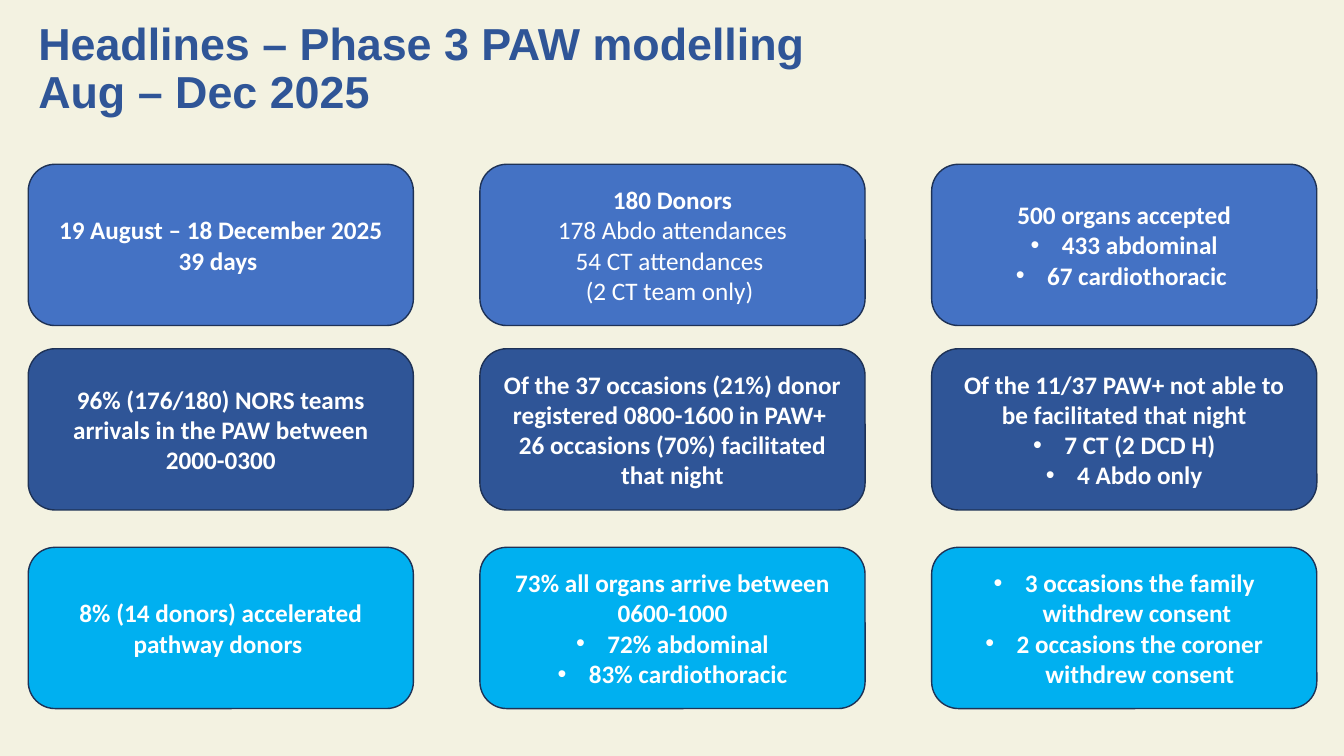
"""Build the Phase 3 PAW modelling headlines slide."""
from dataclasses import dataclass

from lxml.etree import SubElement
from pptx import Presentation
from pptx.dml.color import RGBColor
from pptx.enum.shapes import MSO_SHAPE
from pptx.enum.text import MSO_ANCHOR, MSO_AUTO_SIZE, PP_ALIGN
from pptx.oxml.ns import qn
from pptx.util import Emu, Pt

TITLE = "Headlines – Phase 3 PAW modelling \vAug – Dec 2025"
BOLD, PLAIN, BULLET = "bold", "plain", "bullet"
ROWS = [
    ("4472C4", 163, [
        [(BOLD, "19 August – 18 December 2025"), (BOLD, "39 days ")],
        [(BOLD, "180 Donors"), (PLAIN, "178 Abdo attendances"),
         (PLAIN, "54 CT attendances "), (PLAIN, "(2 CT team only) ")],
        [(BOLD, "500 organs accepted"), (BULLET, "433 abdominal"),
         (BULLET, "67 cardiothoracic ")],
    ]),
    ("2F5597", 346, [
        [(BOLD, "96% (176/180) NORS teams arrivals in the PAW between 2000-0300")],
        [(BOLD, "Of the 37 occasions (21%) donor registered 0800-1600 in PAW+ "),
         (BOLD, "26 occasions (70%) facilitated that night")],
        [(BOLD, "Of the 11/37 PAW+ not able to be facilitated that night"),
         (BULLET, "7 CT (2 DCD H)"), (BULLET, "4 Abdo only")],
    ]),
    ("00B0F0", 543, [
        [(BOLD, "8% (14 donors) accelerated pathway donors ")],
        [(BOLD, "73% all organs arrive between 0600-1000"),
         (BULLET, "72% abdominal"), (BULLET, "83% cardiothoracic")],
        [(BULLET, "3 occasions the family withdrew consent "),
         (BULLET, "2 occasions the coroner withdrew consent")],
    ]),
]


@dataclass(frozen=True)
class Theme:
    """Colours, fonts and type sizes of the slide."""
    background: str = "F3F2E1"
    title: str = "2F5597"
    outline: str = "1E3256"
    text: str = "FFFFFF"
    title_font: str = "Arial"
    body_font: str = "Calibri"
    title_size: int = 32
    body_size: int = 18


THEME = Theme()
PAGE_WIDTH, PAGE_HEIGHT = 1333, 750
CARD_LEFT, CARD_STEP, CARD_WIDTH, CARD_HEIGHT = 28, 448, 382, 160
BULLET_INDENT = 31


def px(length):
    """Turn px into EMU at 100 px to the inch."""
    return Emu(length * 9144)


def style_runs(para, font, size, color, bold):
    """Format every run of a paragraph."""
    for span in para.runs:
        span.font.name = font
        span.font.size = Pt(size)
        span.font.bold = bold
        span.font.color.rgb = RGBColor.from_string(color)


def add_bullet(para):
    """Give a paragraph a round bullet with a hanging indent."""
    properties = para._p.get_or_add_pPr()
    properties.set("marL", str(px(BULLET_INDENT)))
    properties.set("indent", str(-px(BULLET_INDENT)))
    SubElement(properties, qn("a:buFont")).set("typeface", "Arial")
    SubElement(properties, qn("a:buChar")).set("char", "•")


def add_title(page):
    """Place and format the title placeholder."""
    box = page.shapes.title
    box.left, box.top, box.width, box.height = px(28), px(-3), px(998), px(145)
    frame = box.text_frame
    frame.text = TITLE
    frame.auto_size = MSO_AUTO_SIZE.NONE
    frame.vertical_anchor = MSO_ANCHOR.MIDDLE
    para = frame.paragraphs[0]
    para.alignment = PP_ALIGN.LEFT
    para.line_spacing = 0.9
    style_runs(para, THEME.title_font, THEME.title_size, THEME.title, True)


def add_card(page, left, top, fill, lines):
    """Draw one rounded card with its centred lines."""
    card = page.shapes.add_shape(MSO_SHAPE.ROUNDED_RECTANGLE, px(left), px(top),
                                 px(CARD_WIDTH), px(CARD_HEIGHT))
    card.shadow.inherit = False
    card.fill.solid()
    card.fill.fore_color.rgb = RGBColor.from_string(fill)
    card.line.color.rgb = RGBColor.from_string(THEME.outline)
    card.line.width = Pt(1)
    frame = card.text_frame
    frame.word_wrap = True
    frame.vertical_anchor = MSO_ANCHOR.MIDDLE
    frame.text = "\n".join(text for _, text in lines)
    for para, (kind, _) in zip(frame.paragraphs, lines):
        para.alignment = PP_ALIGN.CENTER
        if kind == BULLET:
            add_bullet(para)
        style_runs(para, THEME.body_font, THEME.body_size, THEME.text, kind != PLAIN)


def main():
    """Build and save the deck."""
    deck = Presentation()
    deck.slide_width, deck.slide_height = px(PAGE_WIDTH), px(PAGE_HEIGHT)
    page = deck.slides.add_slide(deck.slide_layouts.get_by_name("Title Only"))
    page.background.fill.solid()
    page.background.fill.fore_color.rgb = RGBColor.from_string(THEME.background)
    add_title(page)
    for fill, top, cards in ROWS:
        for column, lines in enumerate(cards):
            add_card(page, CARD_LEFT + column * CARD_STEP, top, fill, lines)
    deck.save("out.pptx")


if __name__ == "__main__":
    main()
